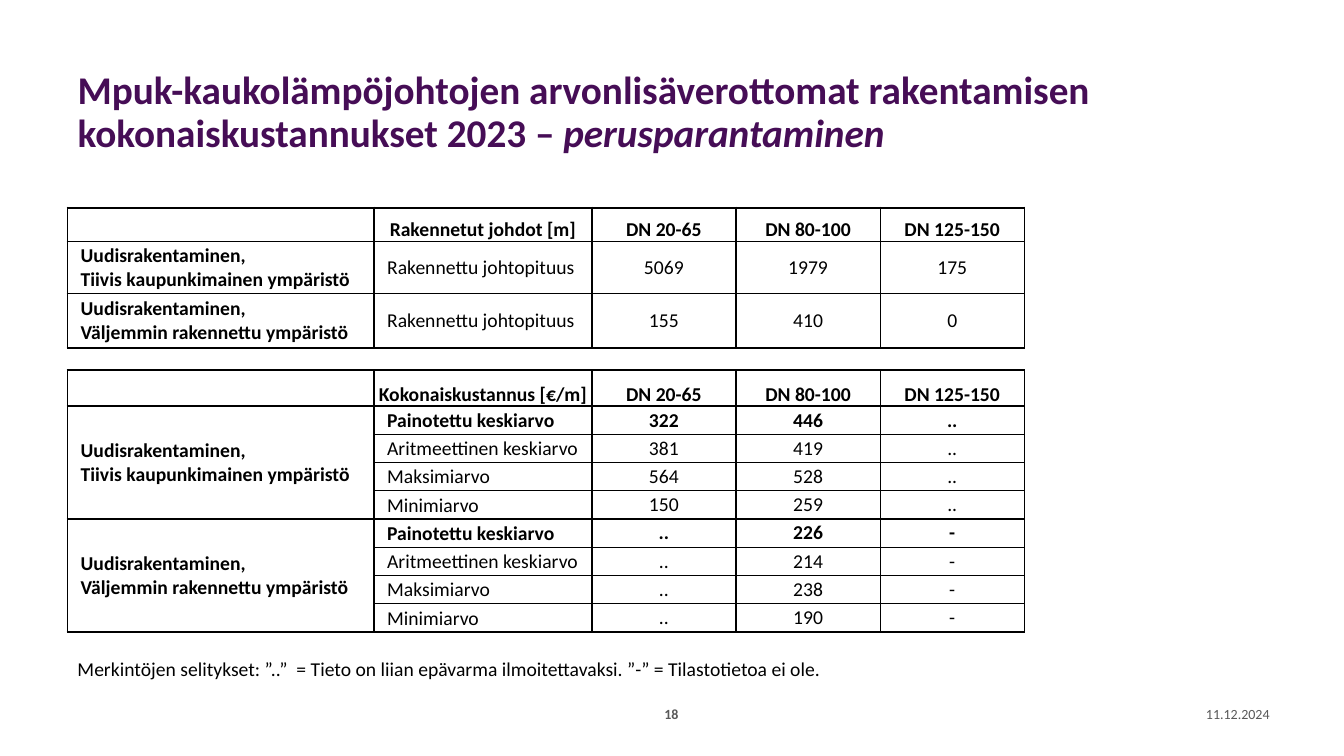
from dataclasses import dataclass

from pptx import Presentation
from pptx.dml.color import RGBColor
from pptx.enum.text import MSO_ANCHOR, MSO_AUTO_SIZE, PP_ALIGN
from pptx.oxml import parse_xml
from pptx.oxml.ns import nsdecls, qn
from pptx.util import Inches, Pt

# Content
TITLE = ("Mpuk-kaukolämpöjohtojen arvonlisäverottomat rakentamisen "
         "kokonaiskustannukset 2023 – ", "perusparantaminen")
SIZES = ["DN 20-65", "DN 80-100", "DN 125-150"]
DENSE = "Uudisrakentaminen,\nTiivis kaupunkimainen ympäristö"
SPARSE = "Uudisrakentaminen,\nVäljemmin rakennettu ympäristö"
AVERAGE = "Painotettu keskiarvo"

LENGTH_ROWS = [
    ["", "Rakennetut johdot [m]", *SIZES],
    [DENSE, "Rakennettu johtopituus", "5069", "1979", "175"],
    [SPARSE, "Rakennettu johtopituus", "155", "410", "0"],
]
COST_ROWS = [
    ["", "Kokonaiskustannus [€/m]", *SIZES],
    [DENSE, AVERAGE, "322", "446", ".."],
    ["", "Aritmeettinen keskiarvo", "381", "419", ".."],
    ["", "Maksimiarvo", "564", "528", ".."],
    ["", "Minimiarvo", "150", "259", ".."],
    [SPARSE, AVERAGE, "..", "226", "-"],
    ["", "Aritmeettinen keskiarvo", "..", "214", "-"],
    ["", "Maksimiarvo", "..", "238", "-"],
    ["", "Minimiarvo", "..", "190", "-"],
]
NOTE = ("Merkintöjen selitykset: ”..”  = Tieto on liian epävarma "
        "ilmoitettavaksi. ”-” = Tilastotietoa ei ole.")
PAGE_NUMBER = "18"
DATE = "11.12.2024"

# Layout in inches
LEFT = 0.67
COLUMNS = [3.04, 2.16, 1.43, 1.43, 1.43]
THICK_COLUMN_EDGES = {0, 2}
PLAIN_TABLE_STYLE = "{2D5ABB26-0587-4C30-8999-92F81FD0307C}"


@dataclass(frozen=True)
class Theme:
    font: str = "Calibri"
    title: RGBColor = RGBColor(0x46, 0x0D, 0x56)
    text: RGBColor = RGBColor(0, 0, 0)
    footer: RGBColor = RGBColor(0x59, 0x59, 0x59)
    paper: RGBColor = RGBColor(0xFF, 0xFF, 0xFF)
    title_size: int = 28
    text_size: int = 14
    footer_size: int = 10
    thin: float = 1
    thick: float = 1.5


THEME = Theme()


def format_text(frame, size, color, bold=False, align=PP_ALIGN.LEFT):
    for para in frame.paragraphs:
        para.alignment = align
        for span in para.runs:
            span.font.name = THEME.font
            span.font.size = Pt(size)
            span.font.bold = bold
            span.font.color.rgb = color


def add_text(page, text, place, size, color, anchor, **style):
    box = page.shapes.add_textbox(*map(Inches, place))
    frame = box.text_frame
    frame.word_wrap = True
    frame.vertical_anchor = anchor
    frame.text = text
    format_text(frame, size, color, **style)


def set_borders(cell, row, column, last_row, thick_rows):
    """Draw the four sides; an edge is thick when its grid line is listed."""
    sides = [("L", column in THICK_COLUMN_EDGES),
             ("R", column + 1 in THICK_COLUMN_EDGES),
             ("T", row in thick_rows),
             ("B", last_row + 1 in thick_rows)]
    properties = cell._tc.get_or_add_tcPr()
    for side, is_thick in sides:
        width = Pt(THEME.thick if is_thick else THEME.thin)
        properties.append(parse_xml(
            f'<a:ln{side} {nsdecls("a")} w="{width}"><a:solidFill>'
            f'<a:srgbClr val="{THEME.text}"/></a:solidFill></a:ln{side}>'))


def fill_cell(cell, text, row, column):
    is_header = row == 0
    is_number = column >= 2
    inset = 0 if is_number else 0.01
    indent = 0 if is_header or is_number else 0.12
    cell.margin_left = Inches(inset + indent)
    cell.margin_right = cell.margin_top = Inches(inset)
    cell.margin_bottom = 0
    cell.vertical_anchor = MSO_ANCHOR.BOTTOM if is_header else MSO_ANCHOR.MIDDLE
    cell.fill.solid()
    cell.fill.fore_color.rgb = THEME.paper
    cell.text_frame.text = text


def add_grid(page, rows, top, heights, thick_rows, group=1):
    frame = page.shapes.add_table(
        len(rows), len(COLUMNS), Inches(LEFT), Inches(top),
        Inches(sum(COLUMNS)), Inches(sum(heights)))
    next(frame.element.iter(qn("a:tableStyleId"))).text = PLAIN_TABLE_STYLE
    table = frame.table
    table.first_row = table.horz_banding = False
    for column, width in zip(table.columns, COLUMNS):
        column.width = Inches(width)
    for row, height in zip(table.rows, heights):
        row.height = Inches(height)
    if group > 1:
        for first in range(1, len(rows), group):
            table.cell(first, 0).merge(table.cell(first + group - 1, 0))

    for r, values in enumerate(rows):
        for c, text in enumerate(values):
            cell = table.cell(r, c)
            if cell.is_spanned:
                continue
            last_row = r + cell.span_height - 1
            set_borders(cell, r, c, last_row, thick_rows)
            fill_cell(cell, text, r, c)
            bold = r == 0 or c == 0 or values[1] == AVERAGE
            centred = r == 0 or c >= 2
            format_text(cell.text_frame, THEME.text_size, THEME.text, bold,
                        PP_ALIGN.CENTER if centred else PP_ALIGN.LEFT)


def main():
    deck = Presentation()
    deck.slide_width, deck.slide_height = Inches(13.33), Inches(7.5)
    page = deck.slides.add_slide(deck.slide_layouts[5])

    # Title
    title = page.shapes.title
    title.left, title.top = Inches(LEFT), Inches(0.4)
    title.width, title.height = Inches(10.37), Inches(1.45)
    frame = title.text_frame
    frame.auto_size = MSO_AUTO_SIZE.NONE
    frame.word_wrap = True
    frame.vertical_anchor = MSO_ANCHOR.MIDDLE
    para = frame.paragraphs[0]
    para.line_spacing = 0.9
    for part in TITLE:
        para.add_run().text = part
    format_text(frame, THEME.title_size, THEME.title, bold=True)
    para.runs[1].font.italic = True

    # Tables
    add_grid(page, LENGTH_ROWS, 2.06, [0.34, 0.51, 0.54], {0, 3})
    add_grid(page, COST_ROWS, 3.67, [0.36] + [0.28] * 8, {0, 1, 5, 9}, group=4)

    # Note and footer
    add_text(page, NOTE, (LEFT, 6.47, 10.91, 0.34), THEME.text_size,
             THEME.text, MSO_ANCHOR.TOP)
    add_text(page, PAGE_NUMBER, (6.36, 6.95, 0.6, 0.27), THEME.footer_size,
             THEME.footer, MSO_ANCHOR.MIDDLE, bold=True, align=PP_ALIGN.CENTER)
    add_text(page, DATE, (11.58, 6.95, 1.11, 0.27), THEME.footer_size,
             THEME.footer, MSO_ANCHOR.MIDDLE, align=PP_ALIGN.RIGHT)

    deck.save("out.pptx")


if __name__ == "__main__":
    main()
